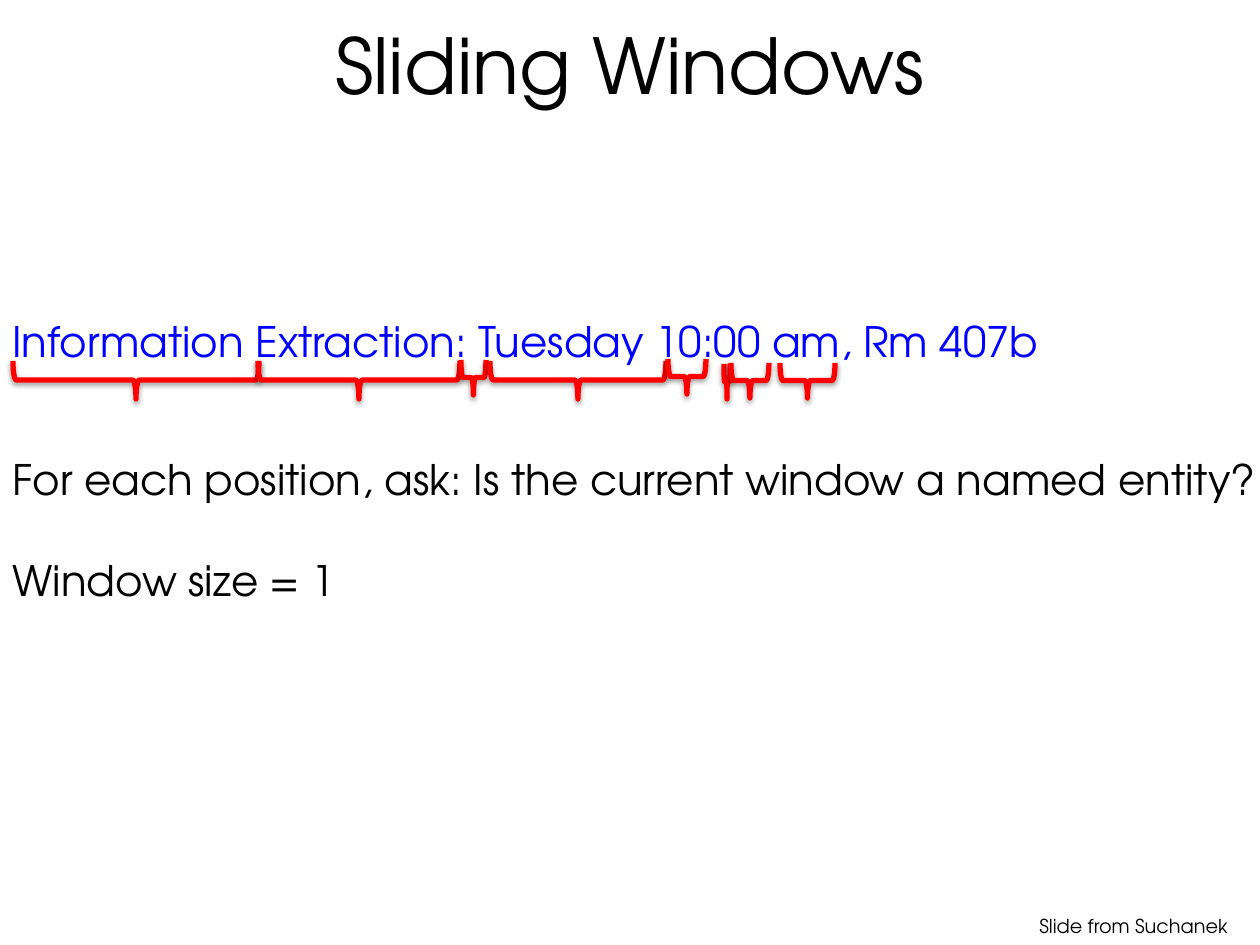
from lxml import etree
from pptx import Presentation
from pptx.dml.color import RGBColor
from pptx.enum.shapes import MSO_SHAPE
from pptx.enum.text import MSO_ANCHOR, MSO_AUTO_SIZE, PP_ALIGN
from pptx.oxml.ns import qn
from pptx.util import Pt

BRACE = MSO_SHAPE.LEFT_BRACE
MIDDLE = MSO_ANCHOR.MIDDLE
CENTER = PP_ALIGN.CENTER
GROW = MSO_AUTO_SIZE.SHAPE_TO_FIT_TEXT

BLACK = RGBColor(0, 0, 0)
BLUE = RGBColor(0, 1, 255)
RED = RGBColor(255, 0, 0)
FONT = "TeX Gyre Adventor"

SCALE = 914400 / 126
TITLE_ONLY = 5

# left, top, span, drop
BRACES = [
    (13, 361, 246, 38),
    (258, 361, 202, 38),
    (461, 360, 25, 35),
    (490, 361, 176, 38),
    (668, 359, 38, 35),
    (724, 364, 6, 35),
    (731, 363, 38, 35),
    (780, 363, 55, 35),
]


def px(n):
    return round(n * SCALE)


def style(frame, size, color):
    for para in frame.paragraphs:
        for run in para.runs:
            run.font.name = FONT
            run.font.size = Pt(size)
            run.font.color.rgb = color


def add_title(slide, text):
    title = slide.shapes.title
    title.left, title.top, title.width, title.height = px(63), px(0), px(1134), px(127)
    frame = title.text_frame
    frame.text = text
    frame.vertical_anchor = MIDDLE
    frame.paragraphs[0].alignment = CENTER
    style(frame, 44, BLACK)


def add_text(slide, box, lines, size, color, wrap=True, gap=0):
    frame = slide.shapes.add_textbox(*map(px, box)).text_frame
    frame.word_wrap = wrap
    frame.auto_size = GROW
    frame.text = "\n".join(lines)
    for para in frame.paragraphs[1:]:
        para.space_before = Pt(gap)
    style(frame, size, color)


def add_shadow(shape):
    shape.shadow.inherit = False
    effects = shape.element.spPr.find(qn("a:effectLst"))
    shadow = etree.SubElement(
        effects, qn("a:outerShdw"), blurRad=str(Pt(3.1)), dist=str(Pt(1.6)),
        dir="5400000", rotWithShape="0")
    color = etree.SubElement(shadow, qn("a:srgbClr"), val=str(BLACK))
    etree.SubElement(color, qn("a:alpha"), val="38000")


def add_brace(slide, left, top, span, drop):
    shift = (span - drop) / 2
    brace = slide.shapes.add_shape(
        BRACE, px(left + shift), px(top - shift), px(drop), px(span))
    brace.rotation = 270
    brace.fill.background()
    brace.line.color.rgb = RED
    brace.line.width = Pt(3)
    add_shadow(brace)


def main():
    deck = Presentation()
    deck.slide_width, deck.slide_height = px(1260), px(945)
    slide = deck.slides.add_slide(deck.slide_layouts[TITLE_ONLY])
    add_title(slide, "Sliding Windows")
    add_text(slide, (0, 309, 1063, 63),
             ["Information Extraction: Tuesday 10:00 am, Rm 407b"], 24, BLUE)
    for brace in BRACES:
        add_brace(slide, *brace)
    add_text(slide, (0, 447, 1283, 165),
             ["For each position, ask: Is the current window a named entity?",
              "Window size = 1"], 24, BLACK, wrap=False, gap=29)
    add_text(slide, (1027, 908, 233, 37), ["Slide from Suchanek"], 11, BLACK)
    deck.save("out.pptx")


if __name__ == "__main__":
    main()
